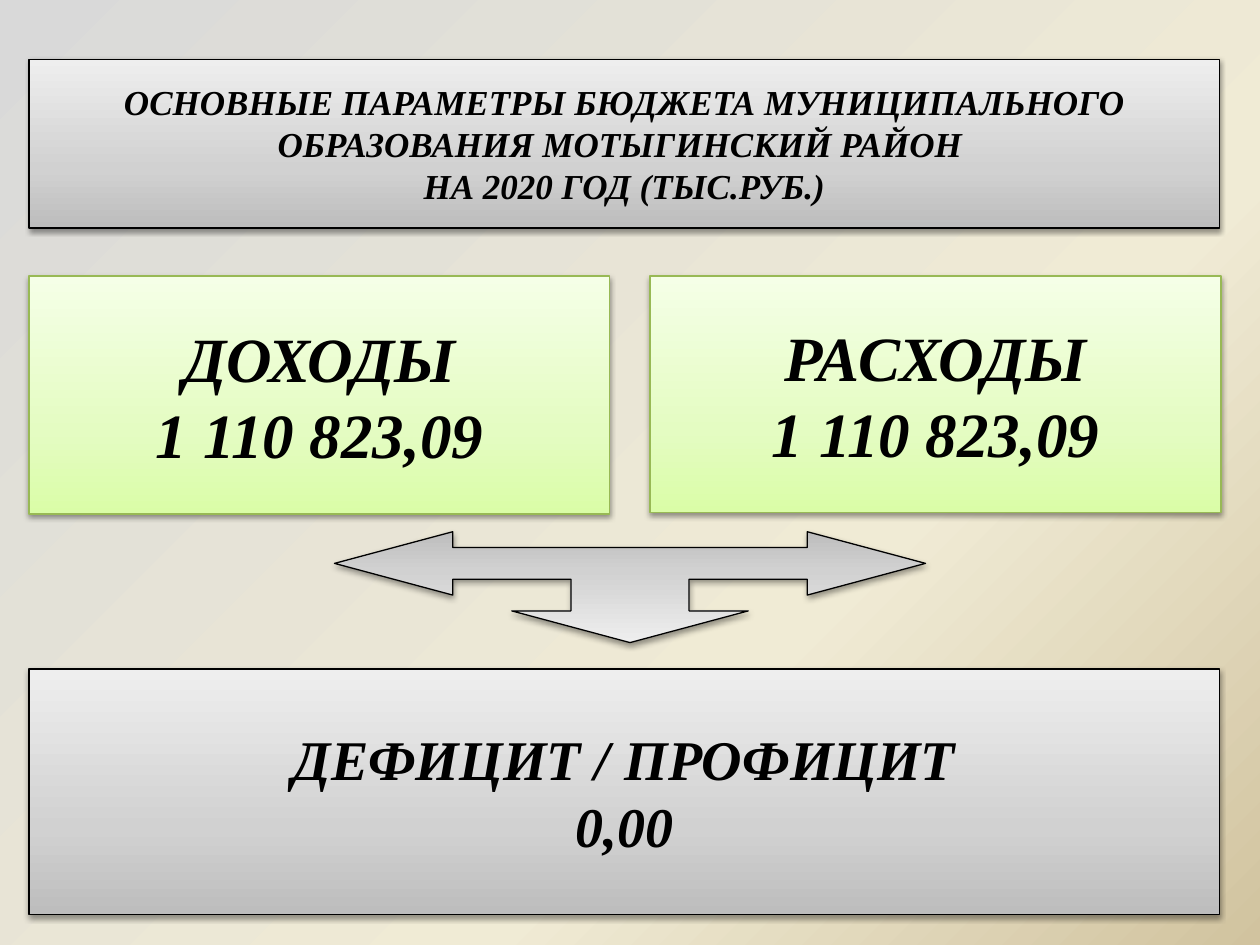
from copy import deepcopy

from lxml import etree
from pptx import Presentation
from pptx.dml.color import RGBColor
from pptx.enum.shapes import MSO_SHAPE
from pptx.enum.text import MSO_ANCHOR, PP_ALIGN
from pptx.oxml.ns import qn
from pptx.util import Inches, Pt

COLORS = {
    "text": "000000", "black": "000000", "olive": "98B955",
    "grey_dark": "BDBDBD", "grey_mid": "D1D1D1", "grey_light": "EEEEEE",
    "green_dark": "DAFDA7", "green_mid": "E4FCC2", "green_light": "F5FFE7",
    "back_grey": "D9D9D9", "back_cream": "F0EBD5", "back_sand": "D1C39F",
}
GREY = [(0, "grey_dark"), (0.35, "grey_mid"), (1, "grey_light")]
GREEN = [(0, "green_dark"), (0.35, "green_mid"), (1, "green_light")]
BACKDROP = [(0, "back_grey"), (0.65, "back_cream"), (1, "back_sand")]


def rgb(name):
    return RGBColor.from_string(COLORS[name])


class BudgetSlide:
    font = "Times New Roman"

    def __init__(self, slide):
        self.slide = slide

    def gradient(self, fill, element, stops, angle):
        fill.gradient()
        stop_list = element.find(".//" + qn("a:gsLst"))
        stop_list.append(deepcopy(stop_list[-1]))
        for stop, (position, color) in zip(fill.gradient_stops, stops):
            stop.position = position
            stop.color.rgb = rgb(color)
        fill.gradient_angle = angle

    def background(self, stops):
        self.gradient(self.slide.background.fill, self.slide.element, stops, 315)

    def finish(self, shape, stops, line, angle):
        """Gradient, outline and soft shadow shared by all shapes."""
        self.gradient(shape.fill, shape.element, stops, angle)
        shape.line.color.rgb = rgb(line)
        shape.line.width = Pt(0.75)
        shape.shadow.inherit = False
        effects = shape.element.spPr.find(qn("a:effectLst"))
        shadow = etree.SubElement(effects, qn("a:outerShdw"), blurRad="40000",
                                  dist="20000", dir="5400000", rotWithShape="0")
        color = etree.SubElement(shadow, qn("a:srgbClr"), val=COLORS["black"])
        etree.SubElement(color, qn("a:alpha"), val="38000")

    def panel(self, box, text, size, stops=GREY, line="black",
              kind=MSO_SHAPE.RECTANGLE, wrap=True):
        shape = self.slide.shapes.add_shape(kind, *map(Inches, box))
        if kind == MSO_SHAPE.ROUNDED_RECTANGLE:
            shape.adjustments[0] = 0
        self.finish(shape, stops, line, 90)
        frame = shape.text_frame
        frame.text = text
        frame.word_wrap = wrap
        frame.vertical_anchor = MSO_ANCHOR.MIDDLE
        for paragraph in frame.paragraphs:
            paragraph.alignment = PP_ALIGN.CENTER
            for run in paragraph.runs:
                font = run.font
                font.name, font.size = self.font, Pt(size)
                font.bold = font.italic = True
                font.color.rgb = rgb("text")

    def three_way_arrow(self, center, top, width, height):
        # Right half on a 10 by 7 grid, from the lower tip to the middle of the bar
        right = [(0, 7), (2, 5), (1, 5), (1, 3), (3, 3), (3, 4),
                 (5, 2), (3, 0), (3, 1)]
        left = [(-x, y) for x, y in reversed(right[1:])]
        builder = self.slide.shapes.build_freeform(
            *right[0], scale=(Inches(width) / 10, Inches(height) / 7))
        builder.add_line_segments(right[1:] + left, close=True)
        arrow = builder.convert_to_shape(Inches(center), Inches(top))
        self.finish(arrow, GREY, "black", 270)


def main():
    prs = Presentation()
    prs.slide_width, prs.slide_height = Inches(10), Inches(7.5)
    budget = BudgetSlide(prs.slides.add_slide(prs.slide_layouts[6]))
    budget.background(BACKDROP)

    # Heading
    budget.panel((0.23, 0.47, 9.45, 1.34),
                 "ОСНОВНЫЕ ПАРАМЕТРЫ БЮДЖЕТА МУНИЦИПАЛЬНОГО ОБРАЗОВАНИЯ "
                 "МОТЫГИНСКИЙ РАЙОН \vНА 2020 ГОД (ТЫС.РУБ.)", 20)

    # Income and expenses
    for box, label in [((0.23, 2.19, 4.61, 1.89), "ДОХОДЫ"),
                       ((5.16, 2.19, 4.53, 1.88), "РАСХОДЫ")]:
        budget.panel(box, label + "\n1 110 823,09", 36, GREEN, "olive",
                     MSO_SHAPE.ROUNDED_RECTANGLE, wrap=False)

    # Balance
    budget.three_way_arrow(5, 4.22, 4.69, 0.88)
    budget.panel((0.23, 5.31, 9.45, 1.95), "ДЕФИЦИТ / ПРОФИЦИТ\n0,00", 32)

    prs.save("out.pptx")


if __name__ == "__main__":
    main()
